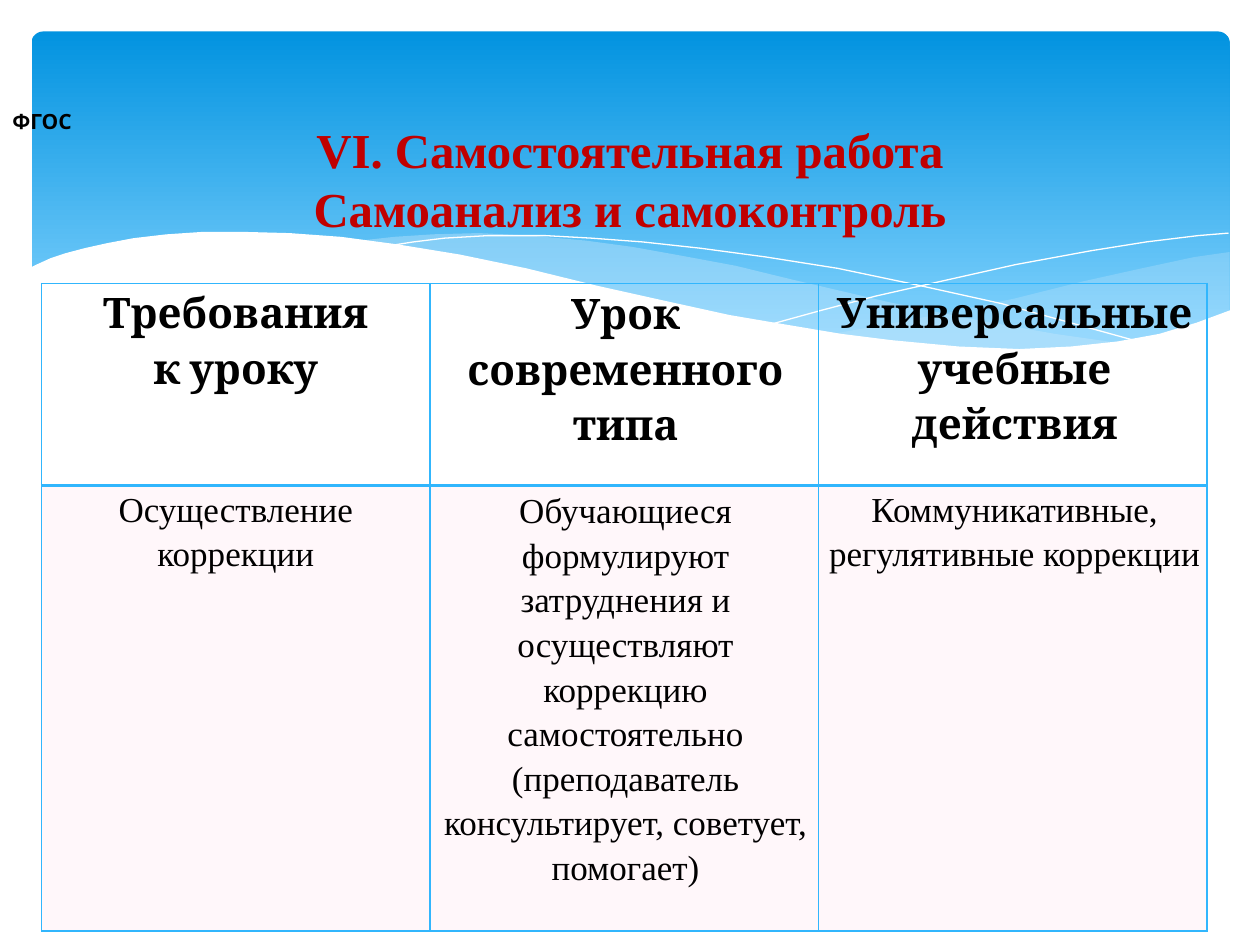
from lxml import etree
from pptx import Presentation
from pptx.dml.color import RGBColor
from pptx.enum.shapes import MSO_SHAPE
from pptx.enum.text import MSO_ANCHOR, PP_ALIGN
from pptx.oxml import parse_xml
from pptx.oxml.ns import nsdecls, qn
from pptx.util import Inches, Pt

ROUND = MSO_SHAPE.ROUNDED_RECTANGLE
TOP, MIDDLE = MSO_ANCHOR.TOP, MSO_ANCHOR.MIDDLE
CENTER = PP_ALIGN.CENTER

BLACK = RGBColor(0, 0, 0)
WHITE = RGBColor(0xFF, 0xFF, 0xFF)
RED = RGBColor(0xC0, 0, 0)
DEEP = RGBColor(0x02, 0x93, 0xE0)
LIGHT = RGBColor(0x83, 0xD3, 0xFE)
PALE = RGBColor(0xC6, 0xE7, 0xFC)
PINK = RGBColor(0xFF, 0xD7, 0xE8)
EDGE = RGBColor(0x31, 0xB6, 0xFD)

HEAD = {"name": "Cambria", "size": Pt(24), "bold": True}
BODY = {"name": "Times New Roman", "size": Pt(20), "bold": False}
TITLE = {"name": "Times New Roman", "size": Pt(27.9), "bold": True}
LABEL = {"name": "Cabin", "size": Pt(12), "bold": True}


def style(para, form, color):
    for run in para.runs:
        for key, value in form.items():
            setattr(run.font, key, value)
        run.font.color.rgb = color


def fade(node, share):
    """Make the solid fill of a node see-through; share is the opacity in percent."""
    color = node.find(qn("a:solidFill")).find(qn("a:srgbClr"))
    etree.SubElement(color, qn("a:alpha")).set("val", str(share * 1000))


prs = Presentation()
prs.slide_width, prs.slide_height = Inches(10), Inches(7.5)
slide = prs.slides.add_slide(prs.slide_layouts[5])
shapes = slide.shapes

# Blue panel
panel = shapes.add_shape(ROUND, Inches(0.25), Inches(0.25), Inches(9.51), Inches(2.7))
panel.adjustments[0] = 0.034
panel.shadow.inherit = False
panel.line.fill.background()
panel.fill.gradient()
panel.fill.gradient_angle = 270
for stop, color, place in zip(panel.fill.gradient_stops, (DEEP, LIGHT), (0, 0.9)):
    stop.color.rgb = color
    stop.position = place

# Waves: points, fill colour (None for an open line), opacity
waves = [
    ([(9.76, 2), (9.48, 2.04), (9.06, 2.13), (8.61, 2.23), (8.05, 2.37),
      (7.53, 2.48), (7.06, 2.57), (6.61, 2.65), (6.91, 2.69), (7.19, 2.72),
      (7.57, 2.76), (8.03, 2.78), (8.44, 2.77), (8.81, 2.73), (9.13, 2.67),
      (9.42, 2.59), (9.63, 2.52), (9.76, 2.47)], PALE, 29),
    ([(8.93, 2.73), (8.37, 2.65), (7.75, 2.54), (7.06, 2.4), (6.29, 2.22),
      (5.84, 2.11), (5.41, 2.03), (5.02, 1.96), (4.65, 1.91), (4.2, 1.87),
      (3.8, 1.85), (3.44, 1.86), (3.13, 1.88), (2.86, 1.91), (3.23, 1.96),
      (3.62, 2.03), (4.04, 2.11), (4.49, 2.22), (5.3, 2.4), (6.01, 2.55),
      (6.5, 2.64), (6.95, 2.7), (7.36, 2.75), (7.73, 2.77), (8.07, 2.78),
      (8.48, 2.77), (8.76, 2.75)], PALE, 40),
    ([(3.09, 1.95), (3.28, 1.92), (3.53, 1.89), (3.87, 1.87), (4.33, 1.87),
      (4.69, 1.89), (5.1, 1.92), (5.56, 1.97), (6.08, 2.04), (6.65, 2.13),
      (7.27, 2.26), (7.95, 2.41), (8.31, 2.51), (9.07, 2.72)], None, 100),
    ([(6.13, 2.57), (6.53, 2.46), (6.95, 2.35), (7.48, 2.23), (8.06, 2.1),
      (8.66, 1.99), (9.1, 1.92), (9.51, 1.87), (9.75, 1.85)], None, 100),
    ([(9.77, 2.46), (9.5, 2.56), (9.2, 2.65), (8.87, 2.71), (8.5, 2.75),
      (8.09, 2.77), (7.61, 2.75), (7.08, 2.7), (6.68, 2.65), (6.26, 2.58),
      (5.79, 2.5), (5.29, 2.39), (4.75, 2.27), (4.18, 2.13), (3.65, 2.02),
      (3.16, 1.94), (2.71, 1.88), (2.3, 1.85), (1.93, 1.84), (1.61, 1.84),
      (1.32, 1.86), (1.06, 1.89), (0.85, 1.93), (0.67, 1.97), (0.52, 2.01),
      (0.4, 2.05), (0.29, 2.1), (0.23, 2.13), (0.23, 3.29), (9.77, 3.29)], WHITE, 100),
]
for points, color, share in waves:
    spots = [(Inches(x), Inches(y)) for x, y in points]
    pen = shapes.build_freeform(*spots[0])
    pen.add_line_segments(spots[1:], close=color is not None)
    wave = pen.convert_to_shape()
    wave.shadow.inherit = False
    if color is None:
        wave.fill.background()
        wave.line.color.rgb = WHITE
        wave.line.width = Pt(0)
    else:
        wave.fill.solid()
        wave.fill.fore_color.rgb = color
        wave.line.fill.background()
        if share < 100:
            fade(wave.element.spPr, share)

# Label
label = shapes.add_textbox(0, Inches(0.78), Inches(0.7), Inches(0.37)).text_frame
label.word_wrap = True
label.vertical_anchor = MIDDLE
label.text = "ФГОС"
style(label.paragraphs[0], LABEL, BLACK)

# Table
rows = [
    ["Требования\nк уроку", "Урок\nсовременного типа", "Универсальные\nучебные действия"],
    ["Осуществление коррекции",
     "Обучающиеся формулируют затруднения и осуществляют коррекцию самостоятельно "
     "(преподаватель консультирует, советует, помогает)",
     "Коммуникативные, регулятивные коррекции"],
]
indents = [0, 0.02, 0.03]
sides = [0, 0.07, 0]
frame = shapes.add_table(2, 3, Inches(0.33), Inches(2.25), Inches(9.25), Inches(5.14))
table = frame.table
table.first_row = table.horz_banding = False
for row, height in zip(table.rows, (1.6, 3.54)):
    row.height = Inches(height)

for r, texts in enumerate(rows):
    thick = "B" if r == 0 else "T"
    for c, text in enumerate(texts):
        cell = table.cell(r, c)
        cell.text = text
        cell.margin_left = cell.margin_right = Inches(sides[c])
        cell.margin_top = Inches(0.01 if c == 1 else 0)
        cell.margin_bottom = 0
        for para in cell.text_frame.paragraphs:
            para.alignment = CENTER
            para.line_spacing = 1.15
            para._p.get_or_add_pPr().set("marL", str(Inches(indents[c])))
            style(para, BODY if r else HEAD, BLACK)
        props = cell._tc.get_or_add_tcPr()
        for side in "LRTB":
            width = Pt(2 if side == thick else 1)
            props.append(parse_xml(
                f'<a:ln{side} {nsdecls("a")} w="{width}"><a:solidFill>'
                f'<a:srgbClr val="{EDGE}"/></a:solidFill></a:ln{side}>'))
        if r:
            cell.fill.solid()
            cell.fill.fore_color.rgb = PINK
            fade(props, 20)
        else:
            cell.fill.background()

# Title, brought in front of the panel
title = shapes.title
title.element.getparent().append(title.element)
title.left, title.top = Inches(0.5), Inches(0.92)
title.width, title.height = Inches(9), Inches(1.58)
words = title.text_frame
words.word_wrap = True
words.vertical_anchor = TOP
words.margin_top = Inches(0.03)
words.text = "VI. Самостоятельная работа\vСамоанализ и самоконтроль"
words.paragraphs[0].alignment = CENTER
style(words.paragraphs[0], TITLE, RED)

prs.save("out.pptx")
